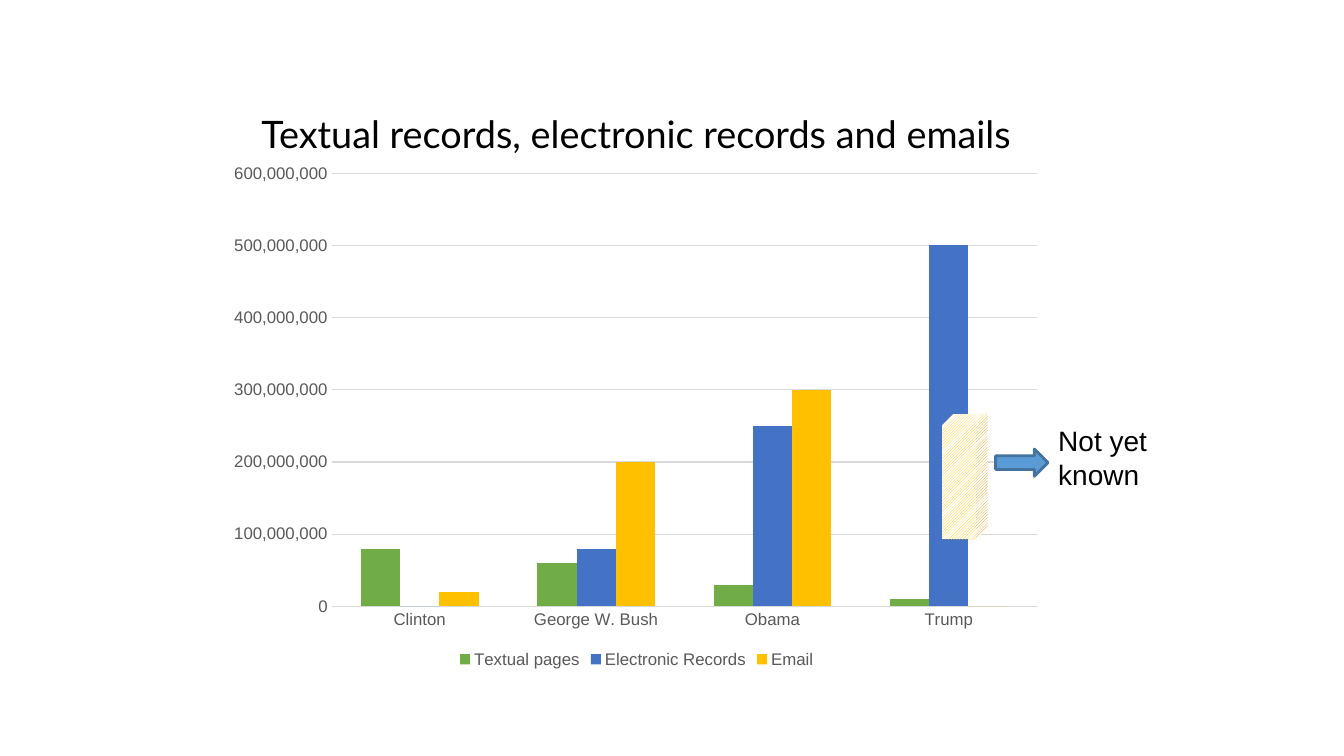
import pptx
import pptx.chart.data
import pptx.dml.color
import pptx.enum.chart
import pptx.enum.dml
import pptx.enum.shapes
import pptx.enum.text
import pptx.oxml
import pptx.oxml.ns
import pptx.util

WIDTH, HEIGHT = 13.33, 7.5
MILLION = 1000000
COLORS = {
    "ink": "000000", "label": "595959", "grid": "D9D9D9", "paper": "FFFFFF",
    "textual": "70AD47", "electronic": "4472C4", "email": "FFC000",
    "hatch": "FFC100", "arrow": "5B9BD5", "arrow_edge": "43739E",
}
PRESIDENTS = ["Clinton", "George W. Bush", "Obama", "Trump"]
RECORDS_IN_MILLIONS = [
    ("Textual pages", "textual", [80, 60, 30, 10]),
    ("Electronic Records", "electronic", [0, 80, 250, 500]),
    ("Email", "email", [20, 200, 300, 0]),
]
PLOT_PERCENT = {"x": 13.5, "y": 3.7, "w": 84.4, "h": 83.6}


def color(name):
    return pptx.dml.color.RGBColor.from_string(COLORS[name])


def box(left, top, width, height):
    shares = ((left, WIDTH), (top, HEIGHT), (width, WIDTH), (height, HEIGHT))
    return [pptx.util.Inches(share * side / 100) for share, side in shares]


def style_font(font, size, ink, face="Arial"):
    font.size = pptx.util.Pt(size)
    font.name = face
    font.bold = False
    font.color.rgb = color(ink)


def write(holder, text, size=20, ink="ink", face="Arial", align="LEFT",
          anchor="TOP", spacing=1.0, insets=(0.1, 0.05)):
    frame = holder.text_frame
    frame.word_wrap = True
    frame.auto_size = pptx.enum.text.MSO_AUTO_SIZE.NONE
    frame.vertical_anchor = getattr(pptx.enum.text.MSO_ANCHOR, anchor)
    frame.margin_left = frame.margin_right = pptx.util.Inches(insets[0])
    frame.margin_top = frame.margin_bottom = pptx.util.Inches(insets[1])
    paragraph = frame.paragraphs[0]
    paragraph.alignment = getattr(pptx.enum.text.PP_ALIGN, align)
    paragraph.line_spacing = spacing
    run = paragraph.add_run()
    run.text = text
    style_font(run.font, size, ink, face)


def add_heading(slide, text, area):
    heading = slide.shapes.title
    heading.left, heading.top, heading.width, heading.height = box(*area)
    write(heading, text, size=27, face="Lato", align="CENTER",
          anchor="MIDDLE", spacing=0.8, insets=(0.07, 0.04))


def style_axis(axis):
    axis.major_tick_mark = pptx.enum.chart.XL_TICK_MARK.NONE
    axis.minor_tick_mark = pptx.enum.chart.XL_TICK_MARK.NONE
    axis.format.line.fill.background()
    style_font(axis.tick_labels.font, 12, "label")


def place_plot(chart):
    plot_area = chart._chartSpace.chart.plotArea
    for layout in plot_area.findall(pptx.oxml.ns.qn("c:layout")):
        plot_area.remove(layout)
    shares = "".join(f'<c:{key} val="{percent / 100:.3f}"/>'
                     for key, percent in PLOT_PERCENT.items())
    plot_area.insert(0, pptx.oxml.parse_xml(
        f'<c:layout {pptx.oxml.ns.nsdecls("c")}><c:manualLayout>'
        '<c:layoutTarget val="inner"/><c:xMode val="edge"/><c:yMode val="edge"/>'
        f'{shares}</c:manualLayout></c:layout>'))


def add_records_chart(slide, area):
    data = pptx.chart.data.CategoryChartData(number_format="#,##0")
    data.categories = PRESIDENTS
    for name, _, millions in RECORDS_IN_MILLIONS:
        data.add_series(name, [count * MILLION for count in millions])
    chart = slide.shapes.add_chart(
        pptx.enum.chart.XL_CHART_TYPE.COLUMN_CLUSTERED, *box(*area), data).chart
    style_font(chart.font, 10, "ink")
    chart.has_title = False

    columns = chart.plots[0]
    columns.gap_width = 150
    columns.overlap = 0
    columns.vary_by_categories = False
    for series, (_, fill, _) in zip(columns.series, RECORDS_IN_MILLIONS):
        series.format.fill.solid()
        series.format.fill.fore_color.rgb = color(fill)

    style_axis(chart.category_axis)
    counts_axis = chart.value_axis
    style_axis(counts_axis)
    counts_axis.minimum_scale = 0
    counts_axis.maximum_scale = 600 * MILLION
    counts_axis.major_unit = 100 * MILLION
    counts_axis.tick_labels.number_format = "#,##0"
    counts_axis.tick_labels.number_format_is_linked = False
    counts_axis.has_major_gridlines = True
    gridline = counts_axis.major_gridlines.format.line
    gridline.color.rgb = color("grid")
    gridline.width = pptx.util.Pt(0.75)

    chart.has_legend = True
    chart.legend.position = pptx.enum.chart.XL_LEGEND_POSITION.BOTTOM
    chart.legend.include_in_layout = False
    style_font(chart.legend.font, 12, "label")
    place_plot(chart)


def add_preset(slide, preset, area, fill, edge=None, pattern=None):
    kind = getattr(pptx.enum.shapes.MSO_SHAPE, preset)
    shape = slide.shapes.add_shape(kind, *box(*area))
    shape.shadow.inherit = False
    if pattern:
        shape.fill.patterned()
        shape.fill.pattern = getattr(pptx.enum.dml.MSO_PATTERN, pattern)
        shape.fill.back_color.rgb = color("paper")
    else:
        shape.fill.solid()
    shape.fill.fore_color.rgb = color(fill)
    if edge:
        shape.line.color.rgb = color(edge)
        shape.line.width = pptx.util.Pt(2)
    else:
        shape.line.fill.background()


def main():
    deck = pptx.Presentation()
    deck.slide_width = pptx.util.Inches(WIDTH)
    deck.slide_height = pptx.util.Inches(HEIGHT)
    slide = deck.slides.add_slide(deck.slide_layouts.get_by_name("Title Only"))

    add_heading(slide, "Textual records, electronic records and emails",
                (17.4, 15.3, 59.86, 5.87))
    add_records_chart(slide, (16.28, 20.4, 62.19, 68.53))
    add_preset(slide, "CUBE", (70.1, 54.75, 3.38, 16.6), "hatch",
               pattern="DARK_UPWARD_DIAGONAL")
    remark = slide.shapes.add_textbox(*box(78, 55.4, 9.53, 11.73))
    write(remark, "Not yet known")
    add_preset(slide, "RIGHT_ARROW", (74.08, 59.4, 3.9, 3.6), "arrow",
               edge="arrow_edge")
    deck.save("out.pptx")


if __name__ == "__main__":
    main()
